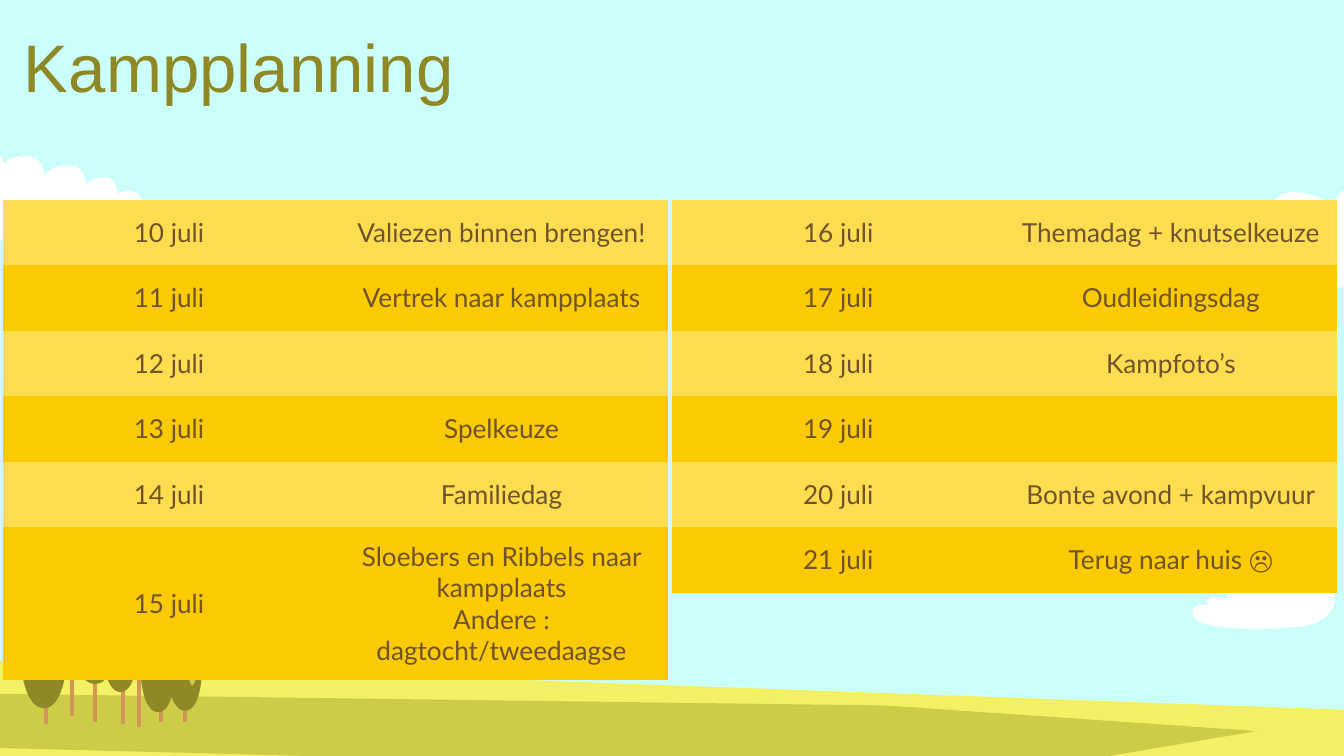
"""Build the camp planning slide: a landscape layout, a title and two schedule tables."""
from lxml.etree import SubElement
from pptx import Presentation
from pptx.dml.color import RGBColor
from pptx.enum.text import MSO_ANCHOR, PP_ALIGN
from pptx.oxml.ns import qn
from pptx.util import Inches, Pt

W, H = 10, 10 * 9 / 16
COL, ROW, TOP = W * 0.495 / 2, H * 0.52 / 6, 1.485
SKY, WHITE, TRUNK, OLIVE, GRASS, MEADOW = "CAFFFC", "FFFFFF", "D39659", "8E8926", "CCCC48", "F4F064"
BANDS, BROWN = ("FFDD50", "FBCA00"), "70522B"


def paint(fill, color):
    fill.solid()
    fill.fore_color.rgb = RGBColor.from_string(color)


def draw(color, outline, left=0, top=0, width=1, height=1):
    """Draw line (2 numbers) and cubic (6 numbers) steps, scaled into a box, on the layout."""
    steps = [[(Inches(left + x * width), Inches(top + y * height))
              for x, y in zip(step[::2], step[1::2])] for step in outline]
    fb = s.shapes.build_freeform(*steps[0][0])
    fb.add_line_segments([step[-1] for step in steps[1:]], close=True)
    sp = fb.convert_to_shape()
    for line, step in zip(list(sp._element.iter(qn("a:lnTo"))), steps[1:]):
        if len(step) == 3:
            line.tag = qn("a:cubicBezTo")
            line.remove(line[0])
            for x, y in step:
                SubElement(line, qn("a:pt"), x=str(x - sp.left), y=str(y - sp.top))
    sp.shadow.inherit = False
    paint(sp.fill, color)
    sp.line.fill.background()
    layout.shapes._spTree.append(sp._element)


prs = Presentation()
prs.slide_width, prs.slide_height = Inches(W), Inches(H)
layout = prs.slide_layouts[6]
s = prs.slides.add_slide(layout)
paint(s.background.fill, SKY)

draw(MEADOW, [(-0.25, 4.91), (-0.17, 5.72), (10.23, 5.87), (10.25, 5.29)])
draw(GRASS, [(-0.25, 5.16), (6.59, 5.25), (9.35, 5.44), (7.46, 5.76), (-0.24, 5.56)])

left_cloud = [
    (-0.11, 1.11), (-0.29, 1.11, -0.29, 1.23, -0.29, 1.23), (-0.29, 1.23, -0.36, 1.16, -0.45, 1.16),
    (-0.49, 1.16, -0.52, 1.17, -0.55, 1.19), (-0.69, 1.27, -0.79, 1.54, -0.46, 1.72),
    (-0.38, 1.76, -0.17, 1.79, 0.08, 1.79), (0.48, 1.79, 0.95, 1.73, 1.02, 1.6),
    (1.06, 1.54, 1.09, 1.45, 0.97, 1.42), (0.91, 1.42, 0.87, 1.44, 0.87, 1.44),
    (0.87, 1.44, 0.89, 1.33, 0.78, 1.32), (0.68, 1.32, 0.64, 1.37, 0.64, 1.37),
    (0.64, 1.37, 0.64, 1.23, 0.52, 1.23), (0.39, 1.23, 0.33, 1.3, 0.33, 1.3),
    (0.33, 1.3, 0.33, 1.16, 0.19, 1.16), (0.04, 1.17, 0.03, 1.22, 0.03, 1.23),
    (0.03, 1.21, 0.02, 1.11, -0.11, 1.11)]
right_cloud = [
    (10.62, 1.31), (10.44, 1.31, 10.4, 1.44, 10.4, 1.46), (10.4, 1.45, 10.4, 1.38, 10.15, 1.37),
    (9.94, 1.37, 9.92, 1.54, 9.92, 1.54), (9.92, 1.54, 9.84, 1.44, 9.62, 1.43),
    (9.45, 1.43, 9.43, 1.61, 9.43, 1.61), (9.43, 1.61, 9.36, 1.54, 9.2, 1.54),
    (9.03, 1.54, 9.04, 1.69, 9.04, 1.69), (9.04, 1.69, 8.99, 1.66, 8.89, 1.67),
    (8.7, 1.69, 8.74, 1.82, 8.78, 1.89), (8.94, 2.17, 11.1, 2.18, 11.26, 2.18),
    (11.26, 2.18, 11.44, 1.54, 11.25, 1.42), (11.2, 1.39, 11.15, 1.38, 11.11, 1.38),
    (10.99, 1.38, 10.91, 1.48, 10.91, 1.48), (10.91, 1.48, 10.93, 1.35, 10.62, 1.31)]
low_cloud = [
    (9.58, 4.3), (9.5, 4.3, 9.49, 4.36, 9.49, 4.37), (9.49, 4.37, 9.49, 4.34, 9.4, 4.34),
    (9.31, 4.34, 9.31, 4.41, 9.31, 4.41), (9.31, 4.41, 9.27, 4.38, 9.19, 4.38),
    (9.12, 4.38, 9.13, 4.46, 9.13, 4.46), (9.13, 4.46, 9.1, 4.44, 9.03, 4.44),
    (8.97, 4.44, 8.98, 4.5, 8.98, 4.5), (8.98, 4.5, 8.96, 4.5, 8.92, 4.5),
    (8.85, 4.52, 8.87, 4.57, 8.89, 4.6), (8.93, 4.66, 9.14, 4.68, 9.35, 4.68),
    (9.55, 4.68, 9.75, 4.66, 9.8, 4.63), (10, 4.52, 9.93, 4.38, 9.85, 4.33),
    (9.83, 4.32, 9.81, 4.32, 9.79, 4.32), (9.73, 4.32, 9.69, 4.36, 9.69, 4.36),
    (9.69, 4.36, 9.69, 4.31, 9.58, 4.3)]
for cloud in (left_cloud, right_cloud, low_cloud):
    draw(WHITE, cloud)

trunk = [(0, 0), (0, 1), (1, 1), (1, 0)]
crown = [(0.46, 0), (0.28, 0.14, 0, 0.42, 0.01, 0.66), (0.02, 0.9, 0.24, 1, 0.51, 1),
         (0.78, 1, 1, 0.89, 0.98, 0.65), (0.98, 0.41, 0.65, 0.12, 0.46, 0)]
glow = [(0.22, 0), (0.1, 0.18, 0, 0.42, 0.11, 0.62), (0.22, 0.9, 0.56, 1, 0.94, 1),
        (1, 0.94, 1, 0.87, 1, 0.79), (0.96, 0.5, 0.55, 0.15, 0.22, 0)]
thin_glow = [(0.22, 0), (0.11, 0.08, 0, 0.25, 0.06, 0.4), (0.17, 0.53, 0.44, 1, 0.61, 1),
             (0.83, 1, 1, 0.64, 0.94, 0.49), (0.89, 0.35, 0.39, 0.08, 0.22, 0)]

for x, y, h in ((0.52, 4.84, 0.49), (0.33, 4.9, 0.49), (1.02, 4.92, 0.49), (0.9, 4.9, 0.49),
                (1.36, 4.88, 0.49), (1.18, 4.88, 0.49), (0.69, 4.97, 0.4)):
    draw(TRUNK, trunk, x, y, 0.03, h)
for x, y, w, h in ((0.52, 3.57, 0.37, 1.52), (0.14, 3.75, 0.37, 1.52), (0.37, 3.82, 0.27, 1.11),
                   (0.06, 3.9, 0.27, 1.11), (1.24, 4.18, 0.27, 1.11), (1.04, 4.19, 0.27, 1.11),
                   (0.76, 4.04, 0.27, 1.11), (0.98, 4.52, 0.13, 0.54), (1.18, 4.63, 0.13, 0.54)):
    draw(OLIVE, crown, x, y, w, h)
draw(GRASS, thin_glow, 1.32, 4.19, 0.18, 0.91)
for x, y, w, h in ((0.27, 3.76, 0.19, 0.86), (1.12, 4.19, 0.18, 0.86),
                   (0.85, 4.04, 0.18, 0.86), (0.63, 3.57, 0.26, 1.25)):
    draw(GRASS, glow, x, y, w, h)

tf = s.shapes.add_textbox(Inches(0.08), Inches(0.09), Inches(8.51), Inches(0.68)).text_frame
tf.word_wrap = True
tf.margin_left = tf.margin_right = tf.margin_top = tf.margin_bottom = Inches(0.1)
tf.text = "Kampplanning"
r = tf.paragraphs[0].runs[0]
r.font.name, r.font.size = "Arial", Pt(36)
r.font.color.rgb = RGBColor.from_string(OLIVE)

schedules = [
    (0.02, 10, 1.13, ["Valiezen binnen brengen!", "Vertrek naar kampplaats", "", "Spelkeuze", "Familiedag",
                      "Sloebers en Ribbels naar kampplaats\nAndere : dagtocht/tweedaagse"]),
    (W / 2, 16, ROW, ["Themadag + knutselkeuze", "Oudleidingsdag", "Kampfoto’s", "",
                      "Bonte avond + kampvuur", "Terug naar huis ☹"])]
for left, first_day, last_row, plans in schedules:
    tbl = s.shapes.add_table(len(plans), 2, Inches(left), Inches(TOP), Inches(2 * COL),
                             Inches(5 * ROW + last_row)).table
    tbl.first_row = tbl.horz_banding = False
    tbl._tbl.tblPr.find(qn("a:tableStyleId")).text = "{2D5ABB26-0587-4C30-8999-92F81FD0307C}"
    for col in tbl.columns:
        col.width = Inches(COL)
    for i, plan in enumerate(plans):
        tbl.rows[i].height = Inches(last_row if i == len(plans) - 1 else ROW)
        for j, text in enumerate((f"{first_day + i} juli", plan)):
            cell = tbl.cell(i, j)
            paint(cell.fill, BANDS[i % 2])
            if not text:
                continue
            cell.text = text
            cell.vertical_anchor = MSO_ANCHOR.MIDDLE
            cell.margin_left = cell.margin_right = cell.margin_top = cell.margin_bottom = Inches(0.1)
            for p in cell.text_frame.paragraphs:
                p.alignment = PP_ALIGN.CENTER
                r = p.runs[0]
                r.font.name, r.font.size = "Lato", Pt(14)
                r.font.color.rgb = RGBColor.from_string(BROWN)

prs.save("out.pptx")
